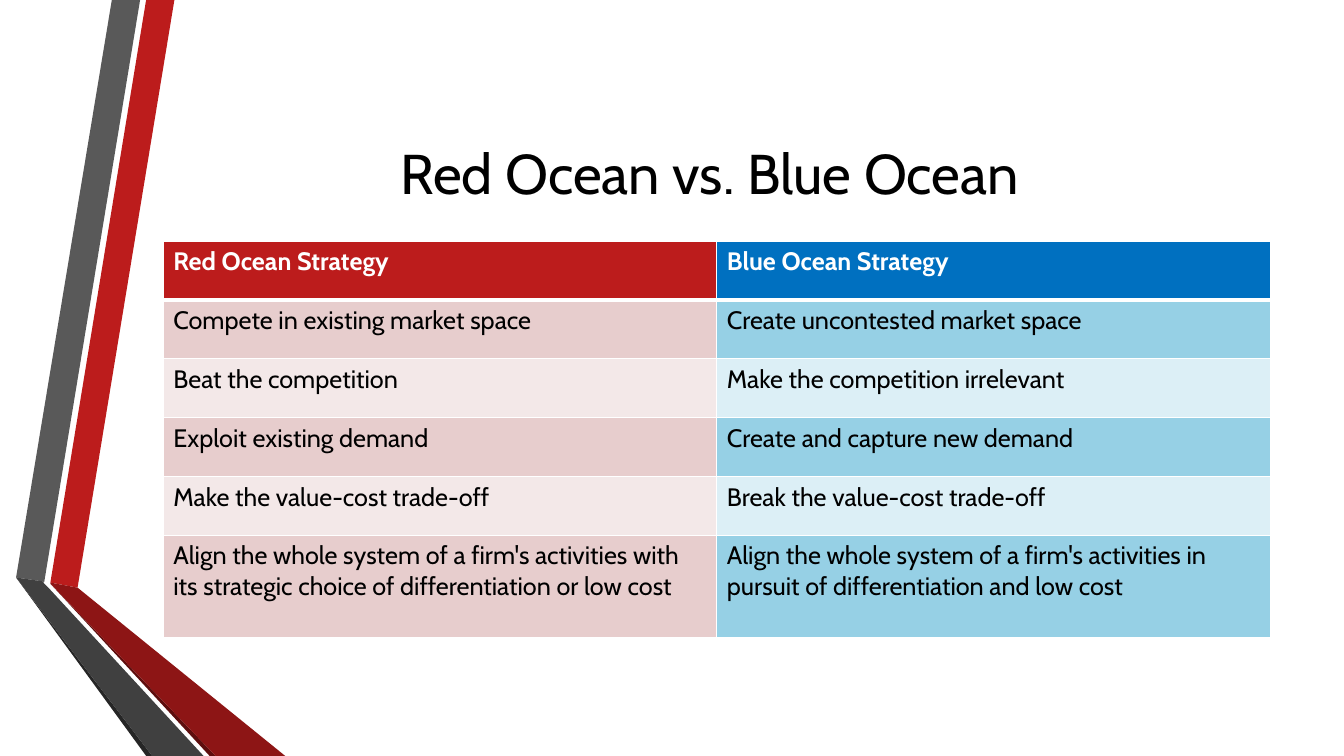
from lxml import etree
from pptx import Presentation
from pptx.dml.color import RGBColor
from pptx.enum.text import MSO_ANCHOR, PP_ALIGN
from pptx.oxml.ns import qn
from pptx.util import Inches, Pt

MIDDLE, TOP = MSO_ANCHOR.MIDDLE, MSO_ANCHOR.TOP
LEFT, CENTER = PP_ALIGN.LEFT, PP_ALIGN.CENTER
FONT = "Cabin"
BLANK_LAYOUT = 6

COLORS = {
    "white": "FFFFFF", "black": "000000",
    "red": "BC1C1C", "dark red": "8D1515", "deep red": "5E0E0E",
    "gray": "595959", "dark gray": "404040", "deep gray": "262626",
    "blue": "0070C0",
    "red band": "E7CDCD", "red light": "F3E8E8",
    "blue band": "96D0E5", "blue light": "DCEFF6",
}

# Folded ribbons at the left edge, from back to front
RIBBONS = [
    ("red", [(0.5, 5.78), (0.77, 5.83), (1.73, 0), (1.45, 0)]),
    ("gray", [(1.39, 0), (1.11, 0), (0.16, 5.73), (0.44, 5.77)]),
    ("deep gray", [(0.16, 5.73), (1.45, 7.5), (1.51, 7.5)]),
    ("deep red", [(0.5, 5.79), (2.08, 7.5), (2.14, 7.5)]),
    ("dark red", [(0.5, 5.79), (2.14, 7.5), (2.83, 7.5), (0.77, 5.83), (0.5, 5.78)]),
    ("dark gray", [(2.02, 7.5), (0.48, 5.83), (0.43, 5.78), (0.44, 5.77),
                   (0.16, 5.73), (1.51, 7.5)]),
]

STRATEGIES = [
    ("Red Ocean Strategy", "Blue Ocean Strategy"),
    ("Compete in existing market space", "Create uncontested market space"),
    ("Beat the competition", "Make the competition irrelevant"),
    ("Exploit existing demand", "Create and capture new demand"),
    ("Make the value-cost trade-off", "Break the value-cost trade-off"),
    ("Align the whole system of a firm's activities with its strategic choice "
     "of differentiation or low cost",
     "Align the whole system of a firm's activities in pursuit of "
     "differentiation and low cost"),
]
ROW_HEIGHT, LAST_ROW_HEIGHT, COLUMN_WIDTH = 0.585, 1.01, 5.49


def rgb(name):
    return RGBColor.from_string(COLORS[name])


def write(frame, text, *, size, color="black", bold=False, align=LEFT, anchor=TOP):
    frame.word_wrap = True
    frame.vertical_anchor = anchor
    para = frame.paragraphs[0]
    para.alignment = align
    span = para.add_run()
    span.text = text
    span.font.name = FONT
    span.font.size = Pt(size)
    span.font.bold = bold
    span.font.color.rgb = rgb(color)


def add_ribbon(page, color, corners):
    points = [(Inches(x), Inches(y)) for x, y in corners]
    builder = page.shapes.build_freeform(*points[0])
    builder.add_line_segments(points[1:], close=True)
    ribbon = builder.convert_to_shape()
    ribbon.shadow.inherit = False
    ribbon.fill.solid()
    ribbon.fill.fore_color.rgb = rgb(color)
    ribbon.line.fill.background()


def add_title(page, text):
    box = page.shapes.add_textbox(Inches(1.62), Inches(0.75), Inches(10.96), Inches(1.92))
    write(box.text_frame, text, size=40, align=CENTER, anchor=MIDDLE)


def set_borders(cell, widths):
    properties = cell._tc.get_or_add_tcPr()
    for side, width in widths.items():
        line = etree.SubElement(properties, qn(f"a:ln{side}"), w=str(Pt(width)))
        fill = etree.SubElement(line, qn("a:solidFill"))
        etree.SubElement(fill, qn("a:srgbClr"), val=COLORS["white"])


def add_strategy_table(page):
    row_count = len(STRATEGIES)
    heights = [ROW_HEIGHT] * (row_count - 1) + [LAST_ROW_HEIGHT]
    table = page.shapes.add_table(
        row_count, 2, Inches(1.62), Inches(2.39),
        Inches(2 * COLUMN_WIDTH), Inches(sum(heights))).table
    for column in table.columns:
        column.width = Inches(COLUMN_WIDTH)
    for row_index, (height, texts) in enumerate(zip(heights, STRATEGIES)):
        table.rows[row_index].height = Inches(height)
        header = row_index == 0
        shade = "" if header else " band" if row_index % 2 else " light"
        # The rule below the header is thicker than the others
        widths = {"L": 1, "R": 1, "T": 3 if row_index == 1 else 1, "B": 3 if header else 1}
        for column_index, (hue, text) in enumerate(zip(("red", "blue"), texts)):
            cell = table.cell(row_index, column_index)
            set_borders(cell, widths)
            cell.fill.solid()
            cell.fill.fore_color.rgb = rgb(hue + shade)
            write(cell.text_frame, text, size=18, bold=header,
                  color="white" if header else "black")


def main():
    deck = Presentation()
    deck.slide_width, deck.slide_height = Inches(13.33), Inches(7.5)
    page = deck.slides.add_slide(deck.slide_layouts[BLANK_LAYOUT])
    for color, corners in RIBBONS:
        add_ribbon(page, color, corners)
    add_title(page, "Red Ocean vs. Blue Ocean ")
    add_strategy_table(page)
    deck.save("out.pptx")


if __name__ == "__main__":
    main()
